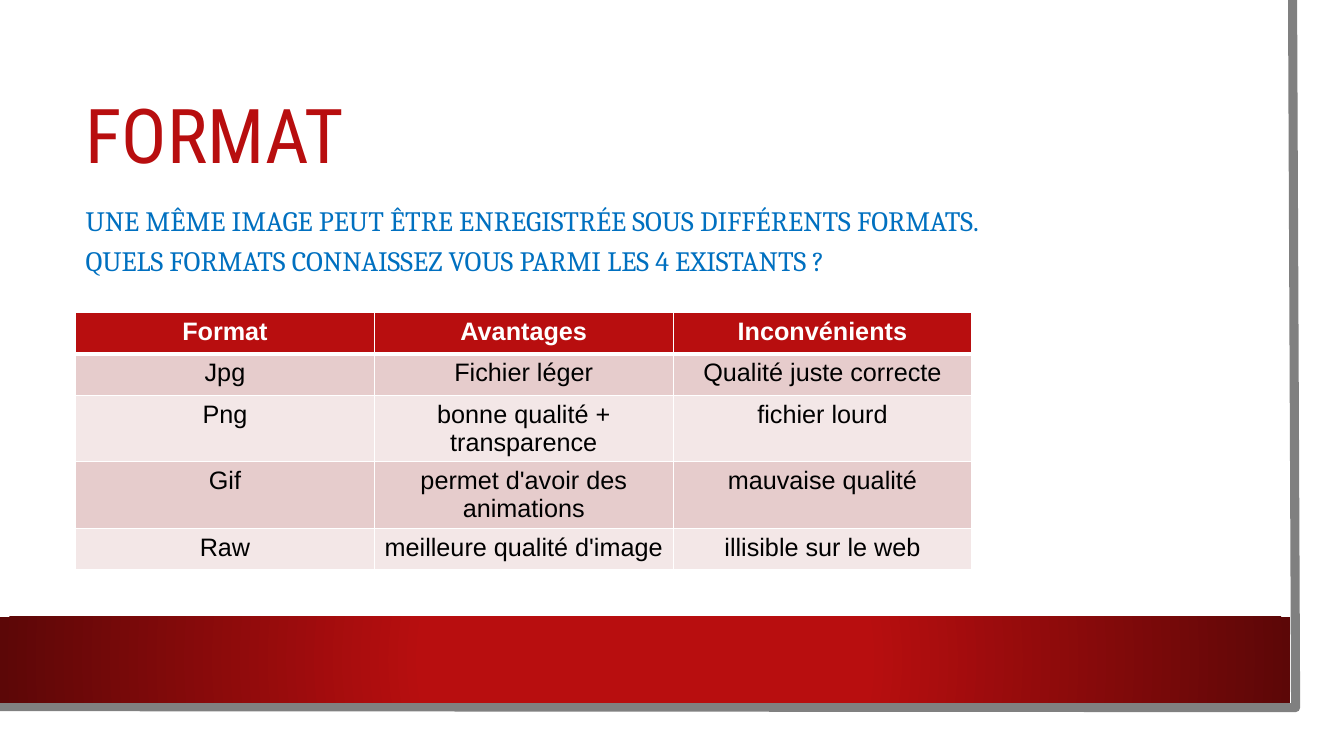
from lxml.etree import SubElement as Sub
from pptx import Presentation
from pptx.dml.color import RGBColor as Rgb
from pptx.enum.shapes import MSO_SHAPE as Kind
from pptx.enum.text import MSO_ANCHOR as Anchor, MSO_AUTO_SIZE as Auto, PP_ALIGN as Align
from pptx.oxml.ns import qn
from pptx.util import Inches, Pt

RED, DARK, WHITE = "B80E0F", "5C0707", "FFFFFF"
ROWS = [
    ["Format", "Avantages", "Inconvénients"],
    ["Jpg", "Fichier léger", "Qualité juste correcte"],
    ["Png", "bonne qualité + transparence", "fichier lourd"],
    ["Gif", "permet d'avoir des animations", "mauvaise qualité"],
    ["Raw", "meilleure qualité d'image", "illisible sur le web"],
]


def color(code):
    return Rgb.from_string(code)


def place(shape, box):
    for name, size in zip(("left", "top", "width", "height"), box):
        setattr(shape, name, Inches(size))


class Page:
    head = {"name": "Roboto Condensed", "size": Pt(54), "bold": False}
    lead = {"name": "Cambria", "size": Pt(20), "bold": False}
    body = {"name": "Arial", "size": Pt(18)}

    def __init__(self, deck):
        self.slide = deck.slides.add_slide(deck.slide_layouts[5])
        self.shapes = self.slide.shapes

    def label(self, frame, text, style, ink, align=Align.LEFT, **form):
        frame.text = text
        para = frame.paragraphs[0]
        for name, value in {"alignment": align, **form}.items():
            setattr(para, name, value)
        for run in para.runs:
            for name, value in style.items():
                setattr(run.font, name, value)
            run.font.color.rgb = color(ink)

    def fit(self, frame):
        frame.word_wrap = True
        frame.auto_size = Auto.NONE
        frame.vertical_anchor = Anchor.MIDDLE

    def title(self, text, box):
        title = self.shapes.title
        place(title, box)
        self.fit(title.text_frame)
        self.label(title.text_frame, text, self.head, RED, line_spacing=0.9)
        title.element.getparent().append(title.element)

    def text(self, text, box, ink):
        frame = self.shapes.add_textbox(*map(Inches, box)).text_frame
        self.fit(frame)
        self.label(frame, text, self.lead, ink, line_spacing=1.2)

    def rect(self, box, fill):
        rect = self.shapes.add_shape(Kind.RECTANGLE, *map(Inches, box))
        rect.shadow.inherit = False
        rect.line.fill.background()
        rect.fill.solid()
        rect.fill.fore_color.rgb = color(fill)
        return rect

    def band(self, box, stops):
        props = self.rect(box, RED).element.spPr
        old = props.find(qn("a:solidFill"))
        grad = Sub(props, qn("a:gradFill"), rotWithShape="1")
        props.replace(old, grad)
        group = Sub(grad, qn("a:gsLst"))
        for pos, code in stops:
            stop = Sub(group, qn("a:gs"), pos=str(pos * 1000))
            Sub(stop, qn("a:srgbClr"), val=code)
        way = Sub(grad, qn("a:path"), path="circle")
        Sub(way, qn("a:fillToRect"), **dict.fromkeys("ltrb", "50000"))

    def edge(self, points, ink, width):
        first, *rest = [tuple(map(Inches, point)) for point in points]
        pen = self.shapes.build_freeform(*first)
        pen.add_line_segments(rest, close=False)
        edge = pen.convert_to_shape()
        edge.shadow.inherit = False
        edge.fill.background()
        edge.line.color.rgb = color(ink)
        edge.line.width = Pt(width)

    def border(self, cell, row):
        props = cell._tc.get_or_add_tcPr()
        wide = {"T": row == 1, "B": row == 0}
        for side in "LRTB":
            size = Pt(3 if wide.get(side) else 1)
            line = Sub(props, qn(f"a:ln{side}"), w=str(size))
            Sub(Sub(line, qn("a:solidFill")), qn("a:srgbClr"), val=WHITE)

    def table(self, rows, box, fills):
        grid = self.shapes.add_table(len(rows), len(rows[0]), *map(Inches, box)).table
        for row, texts in enumerate(rows):
            top = row == 0
            fill = RED if top else fills[(row - 1) % 2]
            for col, text in enumerate(texts):
                cell = grid.cell(row, col)
                self.border(cell, row)
                cell.fill.solid()
                cell.fill.fore_color.rgb = color(fill)
                style = {**self.body, "bold": top}
                self.label(cell.text_frame, text, style, WHITE if top else "000000", Align.CENTER)


def main():
    deck = Presentation()
    deck.slide_width, deck.slide_height = Inches(13.33), Inches(7.5)
    page = Page(deck)
    page.rect((0, 0, 13.1, 7.27), WHITE)
    page.edge([(12.82, 0), (12.85, 7.02), (-0.03, 7.01)], "808080", 6.5)
    page.band((0, 6.12, 12.8, 0.85), [(0, RED), (34, RED), (100, DARK)])
    page.title("FORMAT", (0.75, 0.75, 11.37, 1.26))
    page.text(
        "UNE MÊME IMAGE PEUT ÊTRE ENREGISTRÉE SOUS DIFFÉRENTS FORMATS.\v"
        "QUELS FORMATS CONNAISSEZ VOUS PARMI LES 4 EXISTANTS ?",
        (0.75, 1.84, 11.37, 1.02), "0070C0")
    page.table(ROWS, (0.75, 3.1, 8.89, 2.05), ("E6CCCC", "F3E7E7"))
    deck.save("out.pptx")


if __name__ == "__main__":
    main()
